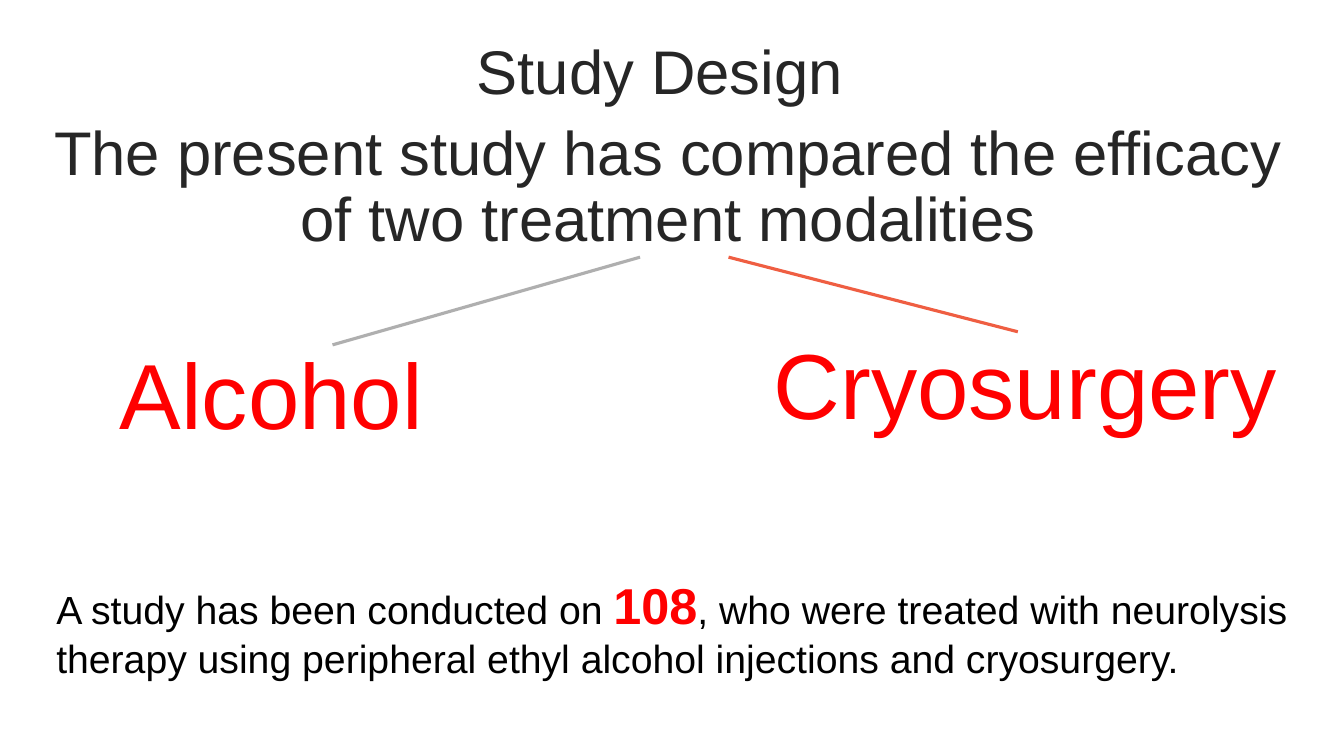
from lxml.etree import SubElement
from pptx import Presentation
from pptx.dml.color import RGBColor
from pptx.enum.shapes import MSO_CONNECTOR as Connector
from pptx.enum.text import MSO_ANCHOR as Anchor, MSO_AUTO_SIZE as AutoSize, PP_ALIGN as Align
from pptx.oxml.ns import qn
from pptx.util import Cm, Pt

INK, BLACK, RED = "262626", "000000", "FF0000"
GREY, CORAL = "AFAFAF", "EF5E42"


def color(value):
    return RGBColor.from_string(value)


def apply(target, values):
    for name, value in values.items():
        setattr(target, name, value)


class Page:
    """Holds the text style and the current slide."""

    font = "Arial"
    line_width = Pt(2.25)

    def __init__(self, deck):
        self.slide = deck.slides.add_slide(deck.slide_layouts[6])

    def text(self, place, paragraphs, para_format=None, **frame_format):
        """Each paragraph is a list of (words, size, colour, bold) spans."""
        box = self.slide.shapes.add_textbox(*map(Cm, place))
        frame = box.text_frame
        apply(frame, {"word_wrap": True, **frame_format})
        for index, spans in enumerate(paragraphs):
            para = frame.add_paragraph() if index else frame.paragraphs[0]
            apply(para, para_format or {})
            for words, size, ink, bold in spans:
                span = para.add_run()
                span.text = words
                apply(span.font, {"name": self.font, "size": Pt(size), "bold": bold})
                span.font.color.rgb = color(ink)

    def line(self, start, end, ink):
        line = self.slide.shapes.add_connector(Connector.STRAIGHT, *map(Cm, start + end))
        line.line.color.rgb = color(ink)
        line.line.width = self.line_width
        SubElement(line._element.spPr, qn("a:effectLst"))


def main():
    deck = Presentation()
    apply(deck, {"slide_width": Cm(33.87), "slide_height": Cm(19.05)})
    page = Page(deck)

    # Heading and statement
    heading = ["Study Design ",
               "The present study has compared the efficacy of two treatment modalities"]
    page.text((0.86, 0.99, 31.98, 5.49),
              [[(words, 44, INK, False)] for words in heading],
              {"alignment": Align.CENTER, "line_spacing": 0.9, "space_before": Pt(10)},
              vertical_anchor=Anchor.MIDDLE)

    # Branches to the two treatments
    page.line((8.38, 8.69), (16.13, 6.48), GREY)
    page.line((18.36, 6.48), (25.65, 8.36), CORAL)

    # Treatments
    treatments = {"Alcohol": (2.77, 8.36, 8.23, 3.07),
                  "Cryosurgery": (19.25, 8.13, 13.34, 3.07)}
    for name, place in treatments.items():
        page.text(place, [[(name, 66, RED, False)]],
                  word_wrap=False, auto_size=AutoSize.SHAPE_TO_FIT_TEXT)

    # Study summary
    summary = [("A study has been conducted on ", 28, BLACK, False),
               ("108", 36, RED, True),
               (", who were treated with neurolysis therapy using peripheral "
                "ethyl alcohol injections and cryosurgery.", 28, BLACK, False)]
    page.text((1.17, 14.33, 31.78, 3), [summary], auto_size=AutoSize.SHAPE_TO_FIT_TEXT)

    deck.save("out.pptx")


if __name__ == "__main__":
    main()
